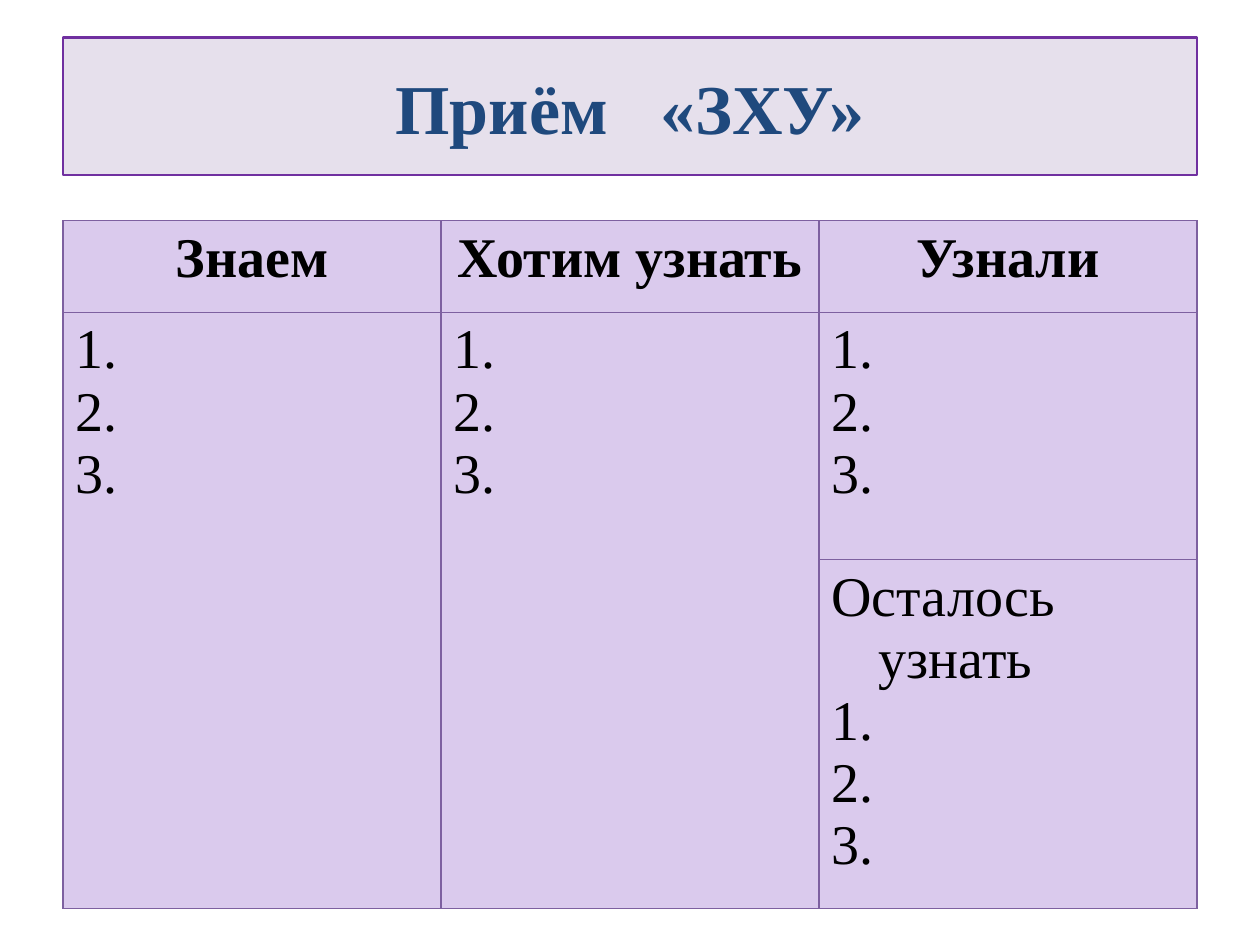
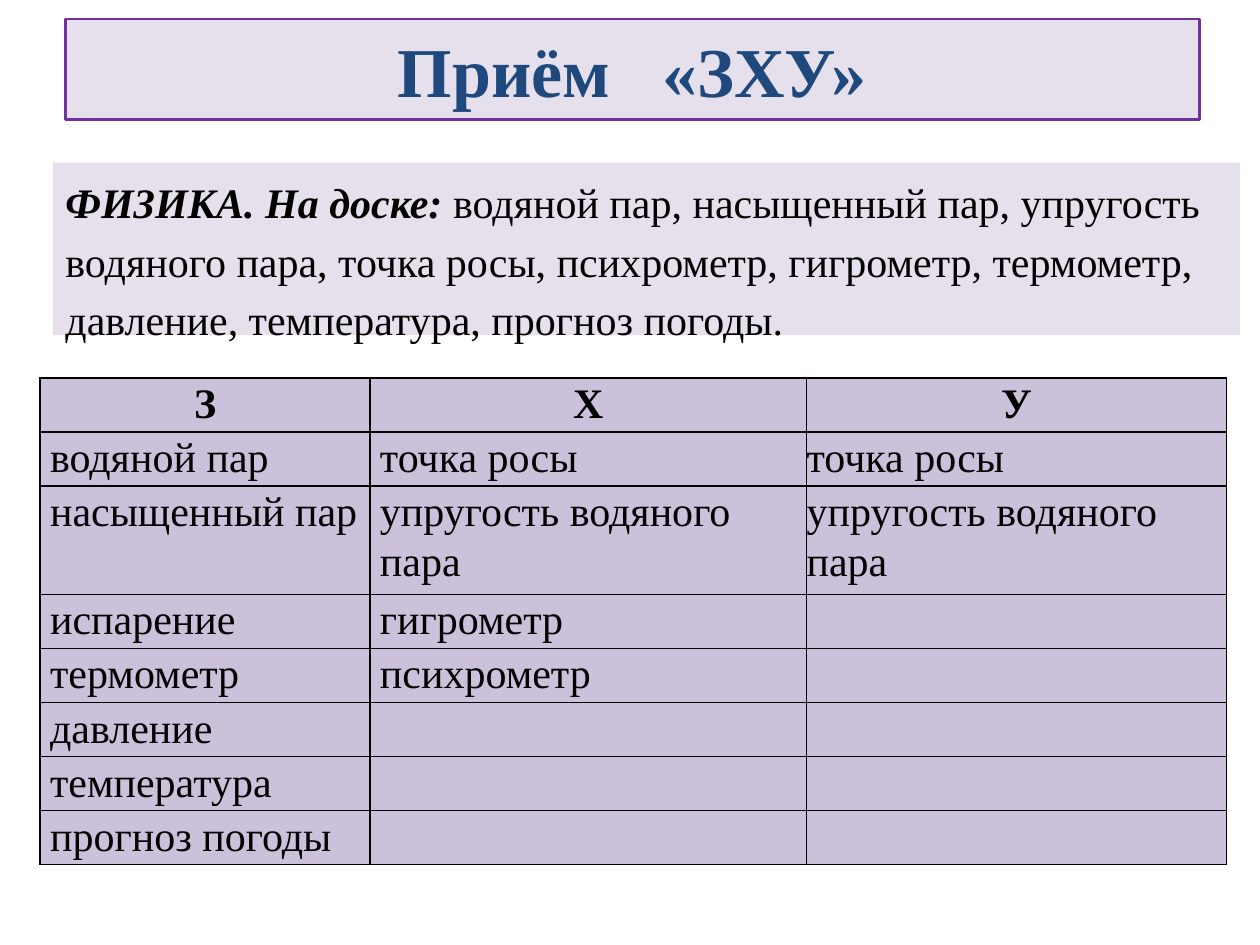
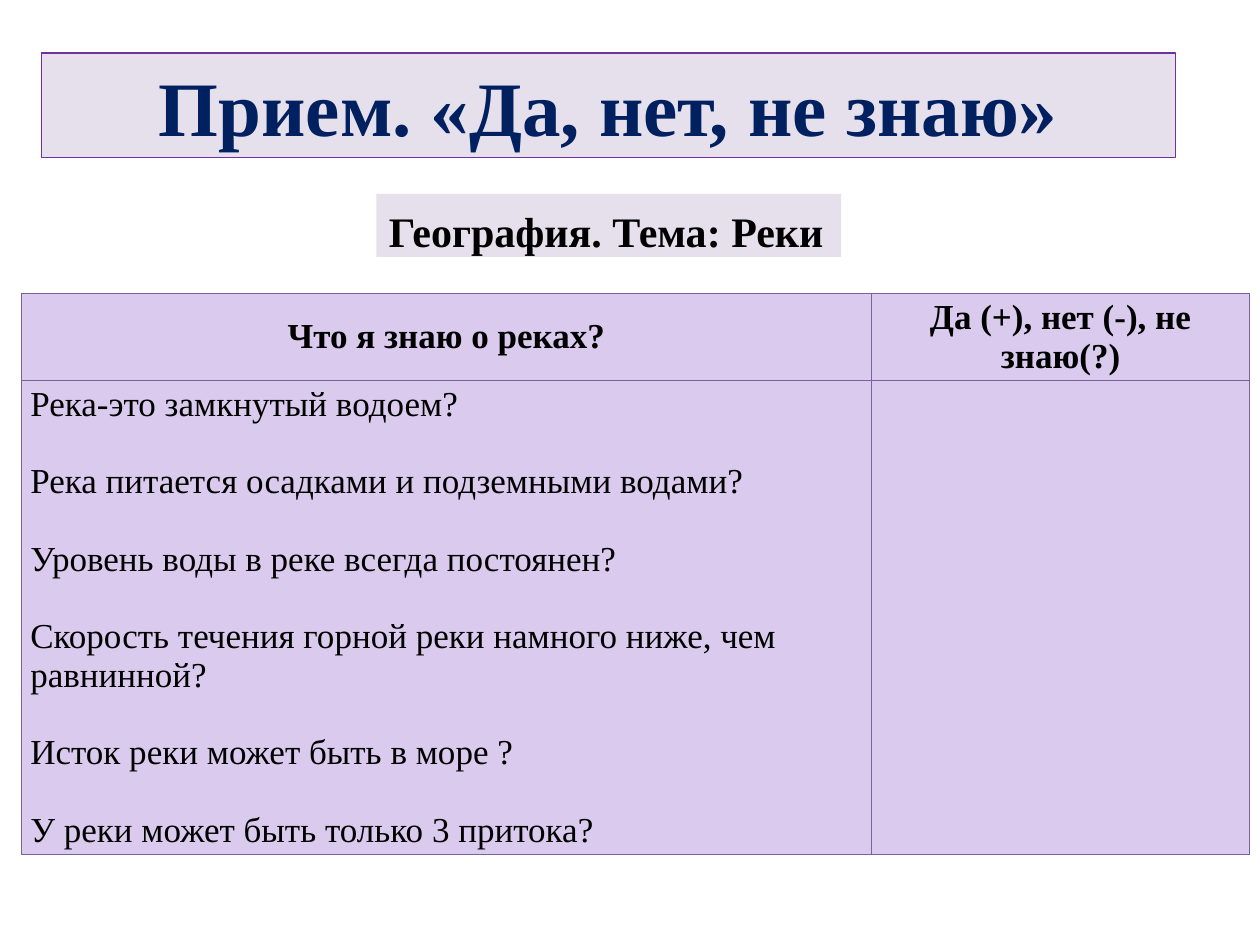
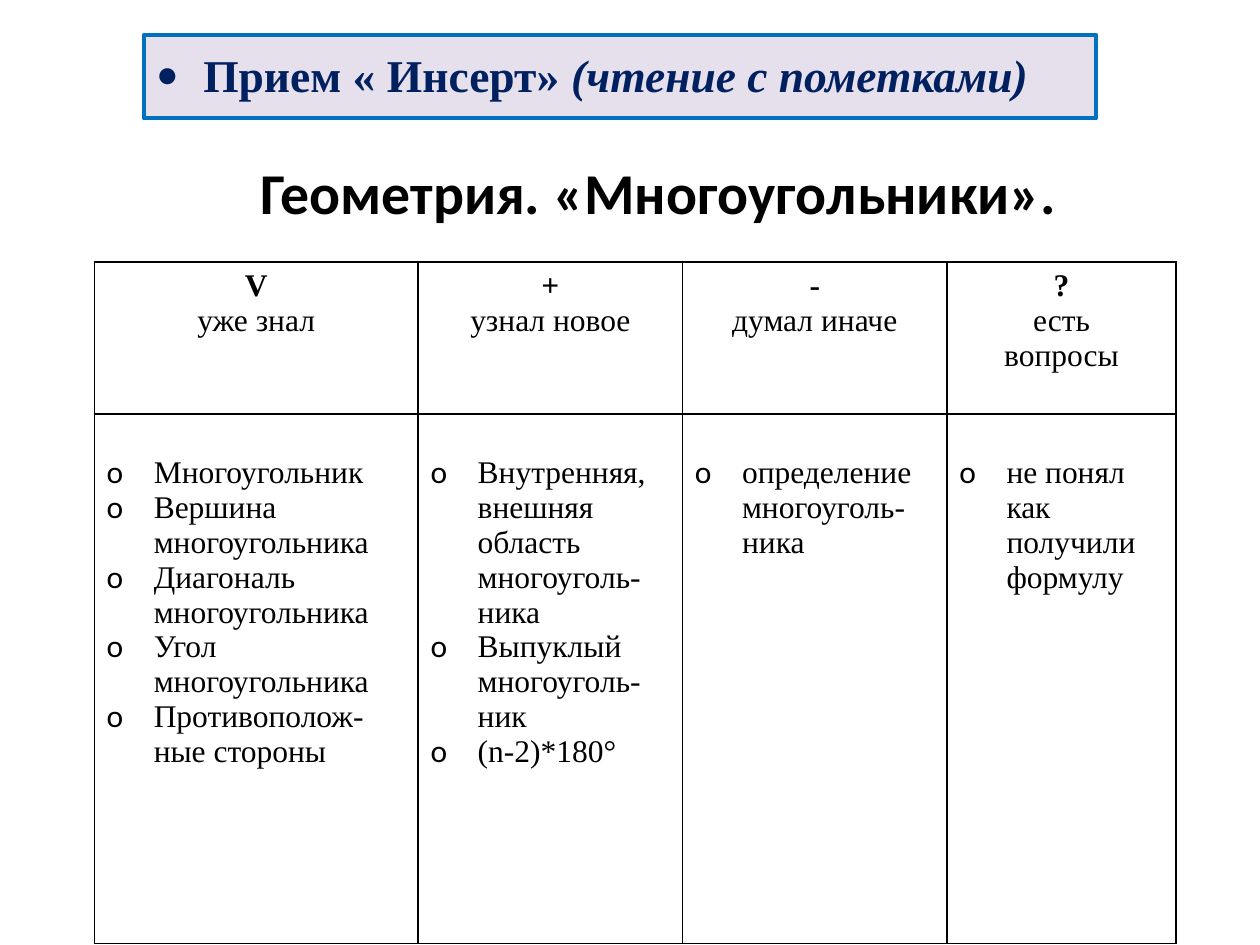
from lxml.etree import SubElement
from pptx import Presentation
from pptx.dml.color import RGBColor
from pptx.enum.shapes import MSO_SHAPE
from pptx.enum.text import MSO_ANCHOR, MSO_AUTO_SIZE, PP_ALIGN
from pptx.oxml.ns import qn
from pptx.util import Cm, Pt

COLORS = {
    "band": "E6E0EC",
    "band_edge": "7030A0",
    "insert_edge": "0070C0",
    "blue": "1F497D",
    "navy": "002060",
    "black": "000000",
    "lilac": "DACAED",
    "lilac_edge": "7D60A0",
    "mauve": "CCC1DA",
}
RGB = {name: RGBColor.from_string(value) for name, value in COLORS.items()}
SERIF = "Times New Roman"
HANGING = Cm(0.95)


def write(frame, lines, size, color="black", bold=False, align=PP_ALIGN.LEFT,
          font=SERIF, bullet=None, hanging=False, spacing=None, gap=0):
    """Fill a text frame; a line is a string or a list of strings, one per run."""
    frame.word_wrap = True
    for index, line in enumerate(lines):
        para = frame.paragraphs[0] if index == 0 else frame.add_paragraph()
        para.alignment = align
        if spacing:
            para.line_spacing = spacing
        if gap and index:
            para.space_before = Pt(gap)
        properties = para._p.get_or_add_pPr()
        if hanging or bullet:
            properties.set("marL", str(HANGING))
            properties.set("indent", str(-HANGING))
        if bullet:
            SubElement(properties, qn("a:buFont"), typeface="Calibri")
            SubElement(properties, qn("a:buChar"), char=bullet)
        for text in [line] if isinstance(line, str) else line:
            span = para.add_run()
            span.text = text
            span.font.name = font
            span.font.size = Pt(size)
            span.font.bold = bold
            span.font.color.rgb = RGB[color]


def add_grid(page, left, top, widths, heights, edge, edge_width, fill=None,
             margins=(0.25, 0.13)):
    """Add a bordered table; all lengths are in centimetres."""
    grid = page.shapes.add_table(
        len(heights), len(widths), Cm(left), Cm(top), Cm(sum(widths)), Cm(sum(heights))
    ).table
    grid.horz_banding = False
    for column, width in zip(grid.columns, widths):
        column.width = Cm(width)
    for row, height in zip(grid.rows, heights):
        row.height = Cm(height)
    for cell in grid.iter_cells():
        cell.margin_left = cell.margin_right = Cm(margins[0])
        cell.margin_top = cell.margin_bottom = Cm(margins[1])
        for side in ("lnL", "lnR", "lnT", "lnB"):
            line = SubElement(cell._tc.get_or_add_tcPr(), qn(f"a:{side}"),
                              w=str(Pt(edge_width)))
            paint = SubElement(line, qn("a:solidFill"))
            SubElement(paint, qn("a:srgbClr"), val=COLORS[edge])
        if fill:
            cell.fill.solid()
            cell.fill.fore_color.rgb = RGB[fill]
        else:
            cell.fill.background()
    return grid


deck = Presentation()
deck.slide_width, deck.slide_height = Cm(25.4), Cm(19.05)

# Titles: place in cm, runs, size, text colour, font, band outline in points
KWL_TITLE = ["Приём", " ", "«ЗХУ»"]
titles = [
    ((1.27, 0.76, 22.86, 2.77), KWL_TITLE, 40, "blue", SERIF, 1.5),
    ((1.32, 0.38, 22.86, 2.03), KWL_TITLE, 40, "blue", SERIF, 1.5),
    ((0.84, 1.07, 22.86, 2.11), ["Прием. «Да, нет, не знаю»"], 44, "navy", SERIF, 0.75),
    ((1.85, 2.97, 22.86, 1.78), ["Геометрия. «Многоугольники»."], 33, "black",
     "Calibri", None),
]
pages = []
for place, spans, size, color, font, outline in titles:
    page = deck.slides.add_slide(deck.slide_layouts[5])
    pages.append(page)
    title = page.shapes.title
    title.left, title.top, title.width, title.height = map(Cm, place)
    title.text_frame.auto_size = MSO_AUTO_SIZE.NONE
    title.text_frame.vertical_anchor = MSO_ANCHOR.MIDDLE
    write(title.text_frame, [spans], size, color, True, PP_ALIGN.CENTER, font)
    if outline:
        title.fill.solid()
        title.fill.fore_color.rgb = RGB["band"]
        title.line.color.rgb = RGB["band_edge"]
        title.line.width = Pt(outline)
    if spans is KWL_TITLE:
        # Widen the gap between the two words
        title.text_frame.paragraphs[0].runs[1].font._element.set("spc", "2000")
kwl_page, physics_page, rivers_page, insert_page = pages

# Bands under or above the titles
bands = []
for page, place, outline in [
    (physics_page, (1.07, 3.28, 23.93, 3.48), None),
    (rivers_page, (7.59, 3.91, 9.37, 1.27), None),
    (insert_page, (2.9, 0.71, 19.2, 1.68), "insert_edge"),
]:
    band = page.shapes.add_shape(MSO_SHAPE.RECTANGLE, *map(Cm, place))
    band.shadow.inherit = False
    band.fill.solid()
    band.fill.fore_color.rgb = RGB["band"]
    if outline:
        band.line.color.rgb = RGB[outline]
        band.line.width = Pt(2.25)
    else:
        band.line.fill.background()
    band.text_frame.vertical_anchor = MSO_ANCHOR.TOP
    bands.append(band.text_frame)
physics_band, rivers_band, insert_band = bands

# Slide 1: empty form
kwl_grid = add_grid(kwl_page, 1.27, 4.45, [7.62] * 3, [1.85, 4.98, 7.04],
                    "lilac_edge", 0.75, "lilac")
numbers = ["1.", "2.", "3."]
for column, heading in enumerate(["Знаем", "Хотим узнать", "Узнали"]):
    write(kwl_grid.cell(0, column).text_frame, [heading], 32, bold=True,
          align=PP_ALIGN.CENTER, hanging=True)
    write(kwl_grid.cell(1, column).text_frame, numbers, 32, hanging=True)
write(kwl_grid.cell(2, 2).text_frame, ["Осталось узнать"] + numbers, 32, hanging=True)
for column in (0, 1):
    kwl_grid.cell(1, column).merge(kwl_grid.cell(2, column))

# Slide 2: physics
write(physics_band, [[
    "ФИЗИКА. На доске:",
    " водяной пар, насыщенный пар, упругость водяного пара, точка росы, психрометр, "
    "гигрометр, термометр, давление, температура, прогноз погоды.",
]], 24, spacing=1.16)
lead = physics_band.paragraphs[0].runs[0]
lead.font.bold = lead.font.italic = True

terms = [
    ["З", "Х", "У"],
    ["водяной пар", "точка росы", "точка росы"],
    ["насыщенный пар", "упругость водяного пара", "упругость водяного пара"],
    ["испарение", "гигрометр"],
    ["термометр", "психрометр"],
    ["давление"],
    ["температура"],
    ["прогноз погоды"],
]
physics_heights = [1.09] * len(terms)
physics_heights[2] *= 2
physics_grid = add_grid(physics_page, 0.81, 7.62, [6.65, 8.8, 8.46], physics_heights,
                        "black", 1, "mauve", (0.2, 0))
for row, words in enumerate(terms):
    physics_grid.cell(row, 2).margin_left = physics_grid.cell(row, 2).margin_right = 0
    for column, word in enumerate(words):
        write(physics_grid.cell(row, column).text_frame, [word], 24, bold=row == 0,
              align=PP_ALIGN.LEFT if row else PP_ALIGN.CENTER, spacing=1.07)

# Slide 3: geography
write(rivers_band, ["География. Тема: Реки"], 24, bold=True)
rivers_band.margin_top = Cm(0.23)
rivers_band.word_wrap = False
rivers_grid = add_grid(rivers_page, 0.43, 5.92, [17.14, 7.62], [1.75, 9.55],
                       "lilac_edge", 0.75, "lilac", (0.18, 0.08))
for cell in rivers_grid.iter_cells():
    cell.vertical_anchor = MSO_ANCHOR.MIDDLE
for column, heading in enumerate(["Что я знаю о реках?", "Да (+), нет (-), не знаю(?)"]):
    write(rivers_grid.cell(0, column).text_frame, [heading], 20, bold=True,
          align=PP_ALIGN.CENTER)
write(rivers_grid.cell(1, 0).text_frame, [
    "Река-это замкнутый водоем?",
    "Река питается осадками и подземными водами?",
    "Уровень воды в реке всегда постоянен?",
    "Скорость течения горной реки намного ниже, чем равнинной?",
    "Исток реки может быть в море ?",
    "У реки может быть только 3 притока?",
], 20, gap=22)

# Slide 4: reading with marks
write(insert_band, [["Прием « Инсерт» ", "(чтение с пометками)"]], 26, "navy", True,
      bullet="•")
insert_band.margin_top = Cm(0.23)
insert_band.paragraphs[0].runs[1].font.italic = True

marks = [
    (["V", "уже знал"],
     ["Многоугольник", "Вершина многоугольника", "Диагональ многоугольника",
      "Угол многоугольника", "Противополож-ные стороны"]),
    (["+", "узнал новое"],
     ["Внутренняя, внешняя область многоуголь-ника", "Выпуклый многоуголь-ник",
      "(n-2)*180°"]),
    (["-", "думал иначе"], ["определение многоуголь-ника"]),
    (["?", "есть", "вопросы"], ["не понял как получили формулу"]),
]
marks_grid = add_grid(insert_page, 1.9, 5.28, [6.53, 5.33, 5.33, 4.62], [3.07, 10.67],
                      "black", 1)
for column, (heading, notes) in enumerate(marks):
    head = marks_grid.cell(0, column).text_frame
    write(head, heading, 18, align=PP_ALIGN.CENTER)
    head.paragraphs[0].runs[0].font.bold = True
    body = marks_grid.cell(1, column)
    body.margin_top = Cm(0.83)
    write(body.text_frame, notes, 18, bullet="o")

deck.save("out.pptx")
